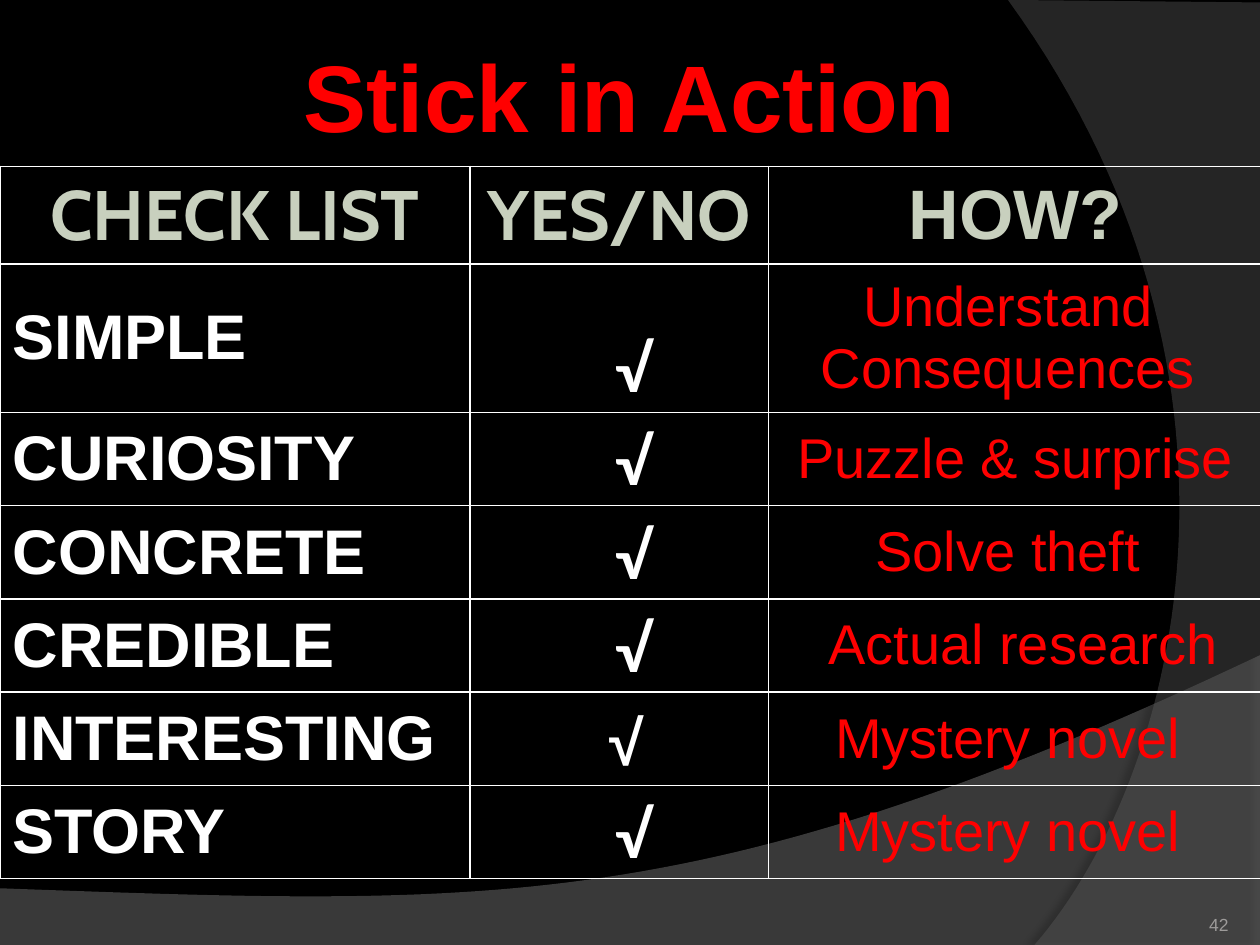
"""Build the Stick in Action checklist slide."""
import pptx
import pptx.util
import pptx.dml.color
import pptx.enum.text
import pptx.oxml
import pptx.oxml.ns

Inches = pptx.util.Inches
ALIGN = pptx.enum.text.PP_ALIGN
ANCHOR = pptx.enum.text.MSO_ANCHOR
NS = pptx.oxml.ns.nsdecls("a")

COLS = [3.73, 2.37, 3.92]
HEADS = [("CHECK LIST", "Cabin"), ("YES/NO", "Cabin"), ("HOW?", "Arial")]
ROWS = [
    ("SIMPLE", "Lato", 0.25, "Understand Consequences", -0.12),
    ("CURIOSITY", "Lato", 0.25, "Puzzle & surprise", 0),
    ("CONCRETE", "Lato", 0.25, "Solve theft", -0.12),
    ("CREDIBLE", "Lato", 0.25, "Actual research", 0.12),
    ("INTERESTING", "Arial", 0.12, "Mystery novel", -0.12),
    ("STORY", "Lato", 0.25, "Mystery novel", -0.12),
]


def color(code):
    return pptx.dml.color.RGBColor.from_string(code)


def style(frame, text, size, code, font="Arial", bold=True, align=ALIGN.CENTER):
    frame.text = text
    para = frame.paragraphs[0]
    para.alignment = align
    face = para.runs[0].font
    face.size = pptx.util.Pt(size)
    face.name = font
    face.bold = bold
    face.color.rgb = color(code)


def add_text(slide, box, text, size, code, pad=(0.1, 0.05),
             anchor=ANCHOR.TOP, **look):
    frame = slide.shapes.add_textbox(*map(Inches, box)).text_frame
    frame.word_wrap = True
    frame.vertical_anchor = anchor
    frame.margin_left = frame.margin_right = Inches(pad[0])
    frame.margin_top = frame.margin_bottom = Inches(pad[1])
    style(frame, text, size, code, **look)


def curve(start, pull, push, end, steps=60):
    """Return points along a cubic curve, without its start."""
    points = []
    for step in range(1, steps + 1):
        t = step / steps
        u = 1 - t
        points.append(tuple(
            u**3 * a + 3 * u * u * t * b + 3 * u * t * t * c + t**3 * d
            for a, b, c, d in zip(start, pull, push, end)))
    return points


def add_wave(slide, points, code, alpha, shade, dist, angle):
    scale = Inches(1)
    build = slide.shapes.build_freeform(
        round(points[0][0] * scale), round(points[0][1] * scale))
    build.add_line_segments(
        [(round(x * scale), round(y * scale)) for x, y in points[1:]])
    wave = build.convert_to_shape()
    wave.fill.solid()
    wave.fill.fore_color.rgb = color(code)
    wave.line.fill.background()
    wave.shadow.inherit = False
    props = wave.element.spPr
    fill = props.find(".//" + pptx.oxml.ns.qn("a:srgbClr"))
    fill.append(pptx.oxml.parse_xml(f'<a:alpha {NS} val="{alpha * 1000}"/>'))
    props.find(pptx.oxml.ns.qn("a:effectLst")).append(pptx.oxml.parse_xml(
        f'<a:outerShdw {NS} blurRad="{pptx.util.Pt(4)}" '
        f'dist="{pptx.util.Pt(dist)}" dir="{angle * 60000}" '
        f'algn="ctr" rotWithShape="0"><a:srgbClr val="000000">'
        f'<a:alpha val="{shade * 1000}"/></a:srgbClr></a:outerShdw>'))


def add_waves(slide):
    low = [(0, 7.05), (0, 7.51), (10, 7.51), (10, 5.2)]
    low += curve((10, 5.2), (5.59, 7.29), (3.91, 7.19), (0, 7.05))
    add_wave(slide, low, "7F7F7F", 45, 35, 3.5, 270)
    side = [(10, 0.02), (10, 7.5), (8.21, 7.5)]
    side += curve((8.21, 7.5), (9.35, 6.19), (10.18, 3), (8, 0))
    add_wave(slide, side + [(10, 0.02)], "5E5E5E", 40, 45, 4, 180)


def set_cell(cell, text, size, code, shift=0, anchor=ANCHOR.MIDDLE, **look):
    """Fill one cell, moving its text sideways by uneven margins."""
    style(cell.text_frame, text, size, code, **look)
    cell.vertical_anchor = anchor
    cell.margin_left = Inches(0.1 + max(shift, 0))
    cell.margin_right = Inches(0.1 + max(-shift, 0))
    cell.fill.background()
    props = cell._tc.get_or_add_tcPr()
    for index, side in enumerate("LRTB"):
        props.insert(index, pptx.oxml.parse_xml(
            f'<a:ln{side} {NS} w="{pptx.util.Pt(1)}"><a:solidFill>'
            f'<a:srgbClr val="FFFFFF"/></a:solidFill></a:ln{side}>'))


def add_list(slide):
    highs = [0.77, 1.18] + [0.74] * 5
    table = slide.shapes.add_table(
        len(highs), len(COLS), 0, Inches(1.32),
        Inches(sum(COLS)), Inches(sum(highs))).table
    table.first_row = table.horz_banding = False
    for col, width in zip(table.columns, COLS):
        col.width = Inches(width)
    for row, high in zip(table.rows, highs):
        row.height = Inches(high)
    for index, (text, font) in enumerate(HEADS):
        set_cell(table.cell(0, index), text, 40, "C8D0BE", font=font)
    for index, (name, font, nudge, how, shift) in enumerate(ROWS, 1):
        set_cell(table.cell(index, 0), name, 36, "FFFFFF", align=ALIGN.LEFT)
        set_cell(table.cell(index, 1), "√", 36, "FFFFFF", nudge,
                 ANCHOR.BOTTOM, font=font)
        set_cell(table.cell(index, 2), how, 32, "FF0000", shift, bold=False)


def main():
    deck = pptx.Presentation()
    deck.slide_width, deck.slide_height = Inches(10), Inches(7.5)
    slide = deck.slides.add_slide(deck.slide_layouts[6])
    slide.background.fill.solid()
    slide.background.fill.fore_color.rgb = color("000000")
    add_waves(slide)
    add_list(slide)
    add_text(slide, (0, 0.25, 10, 1.03), "Stick in Action", 54, "FF0000")
    add_text(slide, (8.92, 7.02, 0.83, 0.4), "42", 10, "9D9B9A", pad=(0, 0),
             anchor=ANCHOR.BOTTOM, bold=False, align=ALIGN.RIGHT)
    deck.save("out.pptx")


if __name__ == "__main__":
    main()
